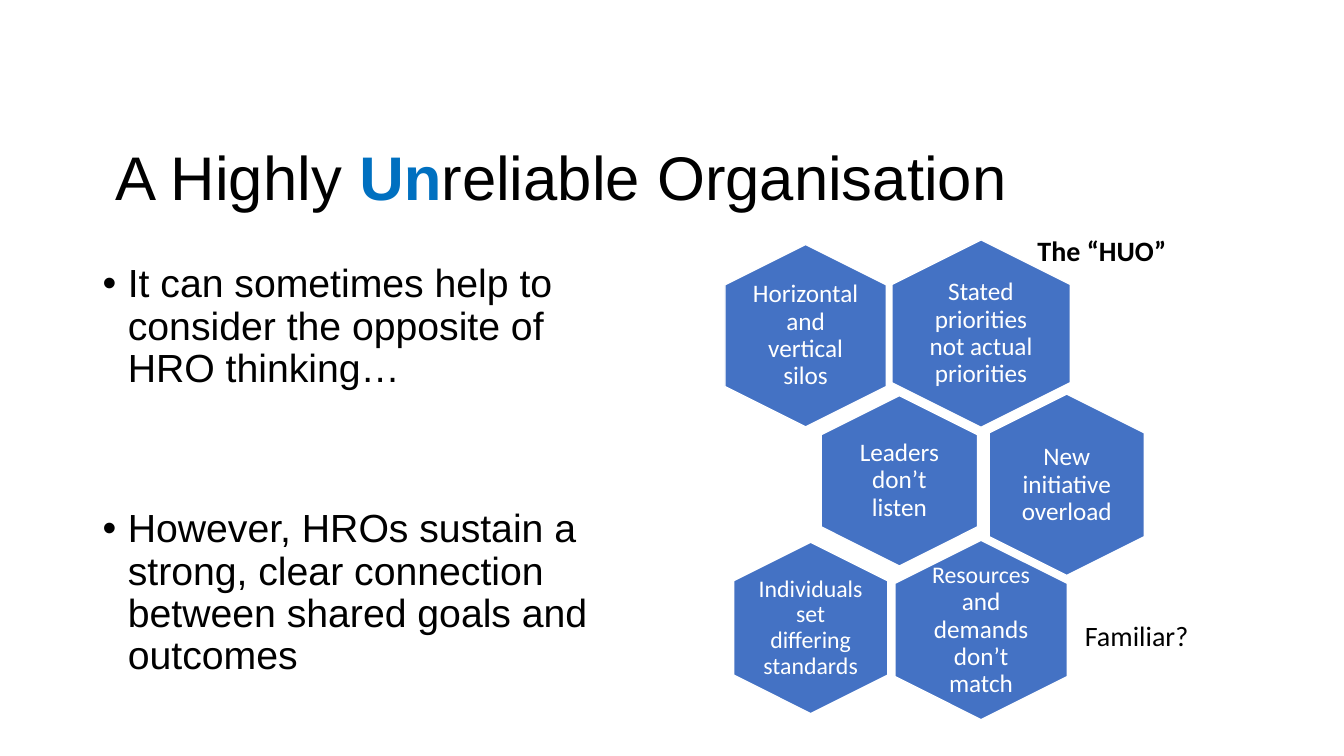
from lxml import etree
from pptx import Presentation, util as u
from pptx.dml.color import RGBColor
from pptx.enum import shapes, text
from pptx.oxml.ns import qn

COLORS = {"ink": "000000", "accent": "0070C0", "hexagon": "4472C4", "white": "FFFFFF"}
TEXT_SHARE = 0.69
BULLETS = [
    (2.57, 1.52, "It can sometimes help to consider the opposite of HRO thinking…"),
    (5, 2.33, "However, HROs sustain a strong, clear connection between shared goals and outcomes"),
]
TRAITS = [
    (9.73, 3.31, 1.86, 1.77, [("Stated priorities not actual priorities", 18)]),
    (7.99, 3.33, 1.81, 1.6, [("Horizontal and vertical silos", 18)]),
    (8.92, 4.77, 1.69, 1.55, [("Leaders don’t listen", 18)]),
    (10.58, 4.81, 1.8, 1.54, [("New initiative overload", 18)]),
    (9.73, 6.25, 1.78, 1.71, [("Resources", 17), (" and demands don’t match", 18)]),
    (8.04, 6.23, 1.7, 1.53, [("Individuals set differing standards", 17)]),
]
REMARKS = [
    ((10.21, 2.1, 1.5, 0.81), "The “HUO”", True),
    ((10.68, 5.92, 1.29, 0.81), "Familiar?", False),
]


def color(name):
    """Return the named colour."""
    return RGBColor.from_string(COLORS[name])


def style(run, font, size, ink="ink", bold=False):
    """Format one run."""
    run.font.name = font
    run.font.size = u.Pt(size)
    run.font.bold = bold
    run.font.color.rgb = color(ink)


def add_text(slide, box, inset, anchor):
    """Add a wrapping text box and return its frame and first paragraph."""
    frame = slide.shapes.add_textbox(*map(u.Inches, box)).text_frame
    frame.word_wrap = True
    frame.vertical_anchor = anchor
    frame.margin_left = frame.margin_right = u.Inches(inset)
    frame.margin_top = frame.margin_bottom = u.Inches(inset / 2)
    paragraph = frame.paragraphs[0]
    paragraph.line_spacing = 0.9
    return frame, paragraph


def add_title(slide, box):
    """Write the title with its emphasised prefix."""
    frame, paragraph = add_text(slide, box, 0.1, text.MSO_ANCHOR.TOP)
    frame.margin_left = u.Inches(0.23)
    for words, ink, bold in (
        ("A Highly ", "ink", False),
        ("Un", "accent", True),
        ("reliable Organisation", "ink", False),
    ):
        run = paragraph.add_run()
        run.text = words
        style(run, "Arial", 44, ink, bold)


def add_bullet(slide, box, words):
    """Write one bulleted statement with a hanging indent."""
    _, paragraph = add_text(slide, box, 0.1, text.MSO_ANCHOR.TOP)
    paragraph.text = words
    properties = paragraph._p.get_or_add_pPr()
    properties.set("marL", str(u.Inches(0.25)))
    properties.set("indent", str(-u.Inches(0.25)))
    etree.SubElement(properties, qn("a:buFont")).set("typeface", "Arial")
    etree.SubElement(properties, qn("a:buChar")).set("char", "•")
    style(paragraph.runs[0], "Arial", 28)


def add_trait(slide, center_x, center_y, length, breadth, parts):
    """Draw an upright hexagon with its label centred on it."""
    hexagon = slide.shapes.add_shape(
        shapes.MSO_SHAPE.HEXAGON,
        u.Inches(center_x - length / 2), u.Inches(center_y - breadth / 2),
        u.Inches(length), u.Inches(breadth),
    )
    hexagon.rotation = 90
    hexagon.shadow.inherit = False
    hexagon.fill.solid()
    hexagon.fill.fore_color.rgb = color("hexagon")
    hexagon.line.color.rgb = color("white")
    hexagon.line.width = u.Pt(1)

    width, height = breadth * TEXT_SHARE, length * TEXT_SHARE
    label_box = (center_x - width / 2, center_y - height / 2, width, height)
    _, label = add_text(slide, label_box, 0, text.MSO_ANCHOR.MIDDLE)
    label.alignment = text.PP_ALIGN.CENTER
    for words, size in parts:
        run = label.add_run()
        run.text = words
        style(run, "Calibri", size, "white")


def add_remark(slide, box, words, bold):
    """Write a remark beside the hexagons."""
    _, paragraph = add_text(slide, box, 0.08, text.MSO_ANCHOR.MIDDLE)
    paragraph.text = words
    style(paragraph.runs[0], "Calibri", 20, bold=bold)


def main():
    """Build and save the slide."""
    deck = Presentation()
    deck.slide_width, deck.slide_height = u.Inches(13.33), u.Inches(7.5)
    slide = deck.slides.add_slide(deck.slide_layouts[6])
    add_title(slide, (0.92, 1.41, 11.5, 1.02))
    for top, height, words in BULLETS:
        add_bullet(slide, (0.92, top, 5.5, height), words)
    for trait in TRAITS:
        add_trait(slide, *trait)
    for remark in REMARKS:
        add_remark(slide, *remark)
    deck.save("out.pptx")


if __name__ == "__main__":
    main()
